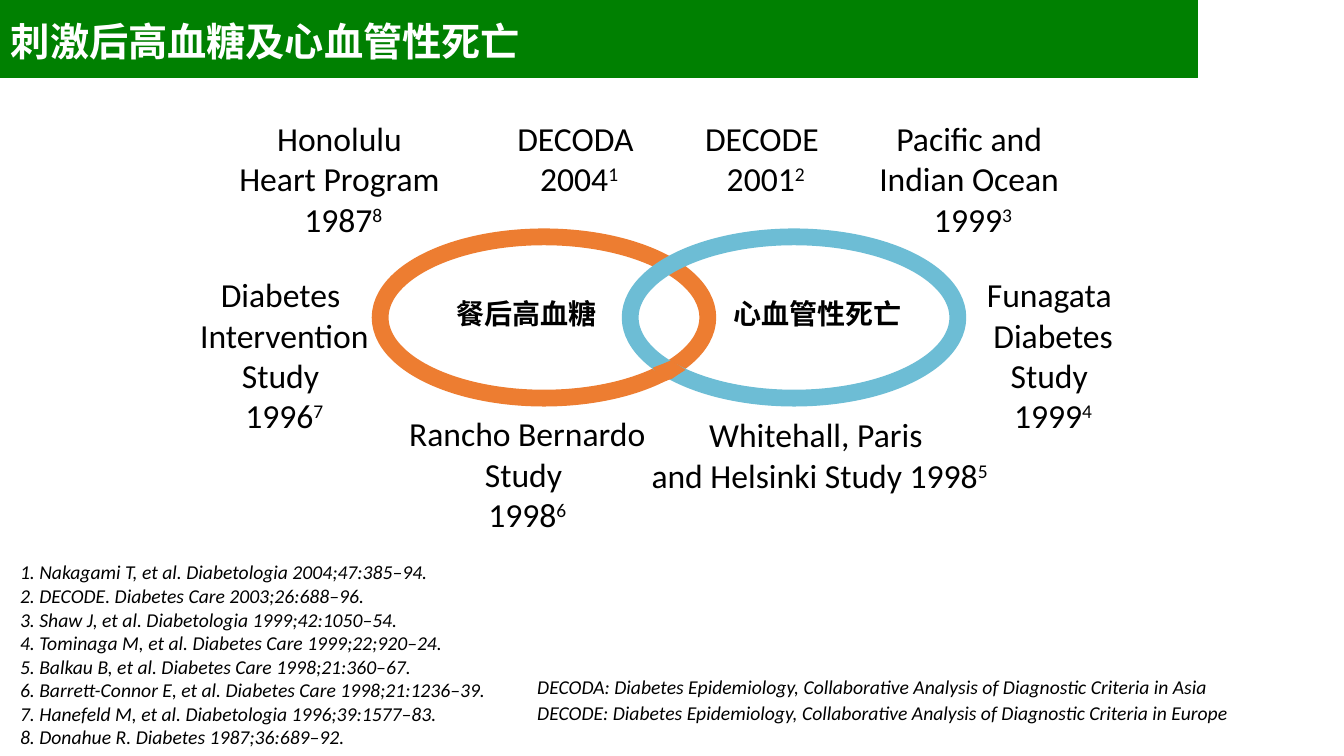
from lxml.etree import SubElement
from pptx import Presentation
from pptx.dml.color import RGBColor
from pptx.enum.shapes import MSO_SHAPE
from pptx.enum.text import MSO_ANCHOR, PP_ALIGN
from pptx.oxml.ns import qn
from pptx.util import Inches, Pt

COLORS = {
    "banner": "008001",
    "white": "FFFFFF",
    "black": "000000",
    "orange": "ED7D31",
    "blue": "6DBDD5",
}
LATIN = "Calibri"
CHINESE = "Noto Sans CJK SC"

REFERENCES = [
    "1. Nakagami T, et al. Diabetologia 2004;47:385–94.",
    "2. DECODE. Diabetes Care 2003;26:688–96.",
    "3. Shaw J, et al. Diabetologia 1999;42:1050–54.",
    "4. Tominaga M, et al. Diabetes Care 1999;22;920–24.",
    "5. Balkau B, et al. Diabetes Care 1998;21:360–67.",
    "6. Barrett-Connor E, et al. Diabetes Care 1998;21:1236–39.",
    "7. Hanefeld M, et al. Diabetologia 1996;39:1577–83.",
    "8. Donahue R. Diabetes 1987;36:689–92.",
]
ABBREVIATIONS = [
    "DECODA: Diabetes Epidemiology, Collaborative Analysis of Diagnostic Criteria in Asia",
    "DECODE: Diabetes Epidemiology, Collaborative Analysis of Diagnostic Criteria in Europe",
]
STUDIES = [
    ((2.03, 1.12, 2.75, 1.31), ["Honolulu ", "Heart Program ", "1987^8"]),
    ((4.86, 1.12, 1.77, 0.91), ["DECODA ", "2004^1"]),
    ((6.66, 1.12, 1.87, 0.91), ["DECODE ", "2001^2"]),
    ((8.44, 1.12, 2.42, 1.31), ["Pacific and ", "Indian Ocean ", "1999^3"]),
    ((9.53, 2.67, 1.83, 1.72), ["Funagata ", "Diabetes Study \v1999^4"]),
    ((6.36, 4.06, 3.54, 1.31), ["Whitehall, Paris \vand Helsinki Study 1998^5"]),
    ((3.78, 4.05, 2.9, 1.31), ["Rancho Bernardo Study \v1998^6"]),
    ((1.61, 2.67, 2.42, 1.72), ["Diabetes ", "Intervention Study \v1996^7"]),
]
CROSSING = [(0, 0.08), (0.09, 0.04), (0.17, 0), (0.31, 0.08), (0.24, 0.13),
            (0.19, 0.17), (0.12, 0.2), (0.08, 0.19)]


def color(name):
    return RGBColor.from_string(COLORS[name])


def add_span(para, text, size, font, ink, bold, italic, raised):
    span = para.add_run()
    span.text = text
    span.font.size = Pt(size)
    span.font.name = font
    span.font.bold = bold
    span.font.italic = italic
    span.font.color.rgb = color(ink)
    properties = span._r.get_or_add_rPr()
    if font == CHINESE:
        SubElement(properties, qn("a:ea")).set("typeface", font)
    if raised:
        properties.set("baseline", "30000")


def add_text(page, box, paragraphs, size=24, font=LATIN, ink="black", bold=False,
             italic=False, align=PP_ALIGN.LEFT, anchor=MSO_ANCHOR.TOP,
             wrap=True, line_spacing=None, gap=0):
    frame = page.shapes.add_textbox(*map(Inches, box)).text_frame
    frame.word_wrap = wrap
    frame.vertical_anchor = anchor
    for number, text in enumerate(paragraphs):
        para = frame.add_paragraph() if number else frame.paragraphs[0]
        para.alignment = align
        if line_spacing:
            para.line_spacing = line_spacing
        if number and gap:
            para.space_before = Pt(gap)
        for row, line in enumerate(text.split("\v")):
            if row:
                para.add_line_break()
            for raised, part in enumerate(line.split("^")):
                add_span(para, part, size, font, ink, bold, italic, raised)


def paint(shape, fill, line, width):
    shape.shadow.inherit = False
    if fill:
        shape.fill.solid()
        shape.fill.fore_color.rgb = color(fill)
    else:
        shape.fill.background()
    shape.line.color.rgb = color(line)
    shape.line.width = Pt(width)


def add_banner(page, left, top, width, height):
    banner = page.shapes.add_shape(
        MSO_SHAPE.RECTANGLE, *map(Inches, (left, top, width, height)))
    paint(banner, "banner", "banner", 1)
    add_text(page, (left + 0.01, top + 0.12, 13.33, 0.57), ["刺激后高血糖及心血管性死亡"],
             size=28, font=CHINESE, ink="white", bold=True, anchor=MSO_ANCHOR.MIDDLE)


def add_rings(page, left, top, width, height):
    ring_width = 3.25
    second = left + width - ring_width
    for x, ink in ((left, "orange"), (second, "blue")):
        ring = page.shapes.add_shape(
            MSO_SHAPE.OVAL, *map(Inches, (x, top, ring_width, height)))
        paint(ring, None, ink, 12)
    points = [(Inches(second + 0.23 + x), Inches(top + 1.23 + y)) for x, y in CROSSING]
    builder = page.shapes.build_freeform(*points[0], scale=1.0)
    builder.add_line_segments(points[1:], close=True)
    patch = builder.convert_to_shape()
    paint(patch, "orange", "orange", 0.75)
    patch.rotation = 3.4
    for x, label_width, label in ((left + 0.65, 1.61, "餐后高血糖"),
                                  (second + 0.91, 1.9, "心血管性死亡")):
        add_text(page, (x, top + 0.57, label_width, 0.42), [label], size=20,
                 font=CHINESE, bold=True, align=PP_ALIGN.CENTER, wrap=False,
                 line_spacing=0.95)


def add_studies(page):
    for box, paragraphs in STUDIES:
        add_text(page, box, paragraphs, align=PP_ALIGN.CENTER)


def add_notes_area(page, left, top):
    add_text(page, (left, top, 5.25, 1.99), REFERENCES, size=14, italic=True)
    add_text(page, (left + 5.13, top + 1.14, 7.65, 0.6), ABBREVIATIONS,
             size=14, italic=True, gap=1.4)


def main():
    deck = Presentation()
    deck.slide_width = Inches(13.33)
    deck.slide_height = Inches(7.5)
    page = deck.slides.add_slide(deck.slide_layouts[6])
    add_banner(page, 0, 0, 11.88, 0.77)
    add_rings(page, 3.77, 2.35, 5.73, 1.6)
    add_studies(page)
    add_notes_area(page, 0.1, 5.51)
    deck.save("out.pptx")


if __name__ == "__main__":
    main()
